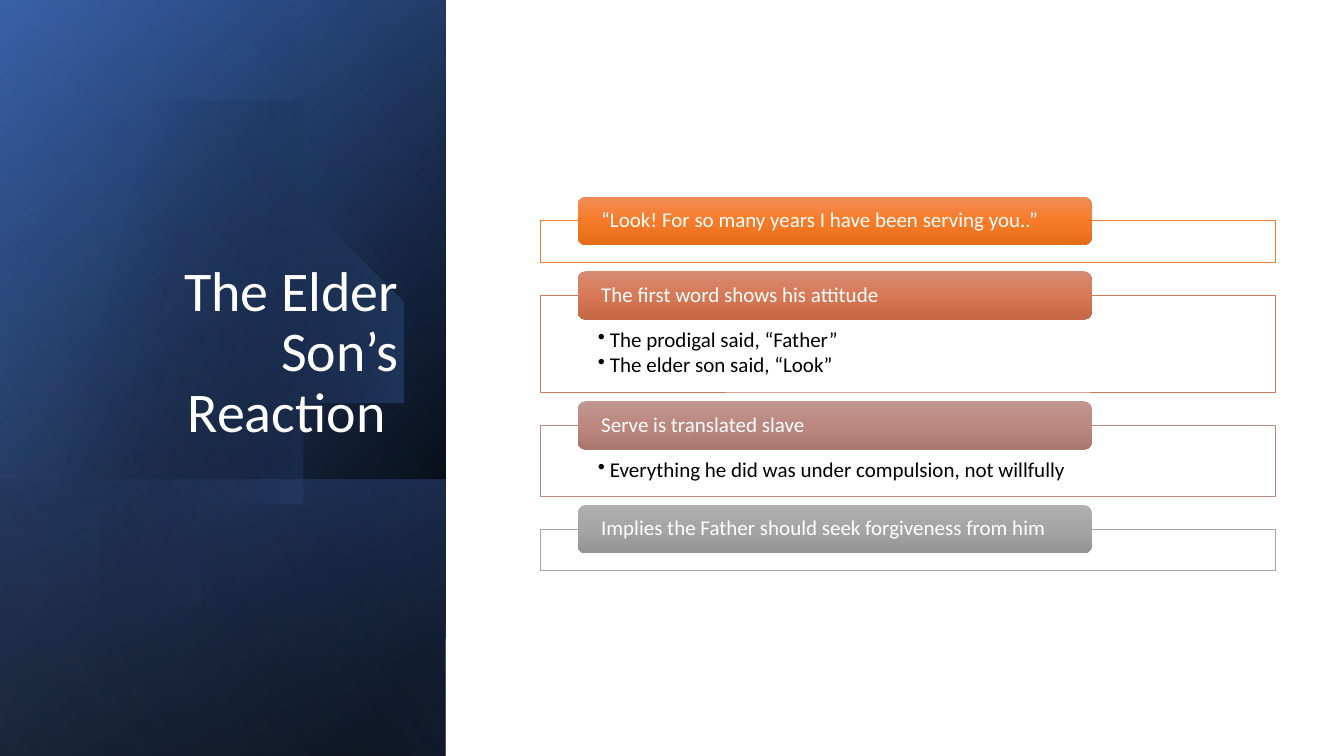
import pptx
import pptx.util
import pptx.dml.color
import pptx.enum.shapes
import pptx.enum.text
import pptx.oxml.ns
import lxml.etree
from dataclasses import dataclass

Inches, Pt = pptx.util.Inches, pptx.util.Pt
RGB = pptx.dml.color.RGBColor.from_string
SHAPE = pptx.enum.shapes.MSO_SHAPE
ANCHOR = pptx.enum.text.MSO_ANCHOR
ALIGN = pptx.enum.text.PP_ALIGN
qn = pptx.oxml.ns.qn

TITLE = "The Elder Son’s Reaction "
POINTS = [
    ("“Look! For so many years I have been serving you..”", [],
     "ED7D31", ("F18C57", "F67B28", "E56C19")),
    ("The first word shows his attitude",
     ["The prodigal said, “Father”", "The elder son said, “Look”"],
     "D17B5C", ("D78B72", "D77956", "C66846")),
    ("Serve is translated slave",
     ["Everything he did was under compulsion, not willfully"],
     "B98A82", ("C19791", "BC8880", "AA766E")),
    ("Implies the Father should seek forgiveness from him", [],
     "A5A5A5", ("AFAFAF", "A5A5A5", "939393")),
]


@dataclass(frozen=True)
class Theme:
    font: str = "Calibri"
    title_size: int = 40
    text_size: int = 15
    white: str = "FFFFFF"
    black: str = "000000"
    blue: str = "4472C4"
    deep_blue: str = "2F5597"
    pale_blue: str = "8FAADC"


THEME = Theme()
PANEL_WIDTH, SLIDE_HEIGHT = 4.42, 7.5
LOWER_HEIGHT = 2.74

BACKDROP = [(8, THEME.black, 100), (100, THEME.deep_blue, 100)], 50
GLOW = [(0, THEME.black, 0), (99, THEME.blue, 46)], 30
LOWER_SHADE = [(2, THEME.blue, 29), (100, THEME.black, 30)], 130
DISC_SHADE = [(29, THEME.black, 0), (100, THEME.blue, 43)], 14
SHEEN = [(0, THEME.black, 0), (99, THEME.pale_blue, 11)], 120

DISC_START = (1.49, 1.1)
DISC_CURVES = [
    ((2.46, 1.12), (3.35, 1.77), (3.63, 2.75)),
    ((3.98, 3.97), (3.28, 5.23), (2.07, 5.58)),
    ((1.31, 5.8), (0.53, 5.61), (-0.03, 5.14)),
    ((-0.15, 5.03), (-0.15, 5.03), (-0.15, 5.03)),
    ((-0.15, 1.75), (-0.15, 1.75), (-0.15, 1.75)),
    ((0, 1.61), (0, 1.61), (0, 1.61)),
    ((0.23, 1.42), (0.5, 1.28), (0.8, 1.19)),
    ((1.03, 1.13), (1.26, 1.1), (1.49, 1.1)),
]
CURVE_STEPS = 16

FRAME_LEFT, FRAME_WIDTH, FRAME_GAP, FIRST_TOP = 5.36, 7.29, 0.33, 2.19
FRAME_HEIGHTS = {0: 0.41, 1: 0.7, 2: 0.96}
PILL_LEFT, PILL_WIDTH, PILL_HEIGHT = 5.73, 5.1, 0.48


def add_alpha(color, percent):
    if percent < 100:
        lxml.etree.SubElement(color, qn("a:alpha"), val=str(percent * 1000))


def fill_gradient(shape, stops, angle):
    shape.shadow.inherit = False
    shape.fill.background()
    gradient = lxml.etree.Element(qn("a:gradFill"), rotWithShape="1")
    stop_list = lxml.etree.SubElement(gradient, qn("a:gsLst"))
    for position, hex_color, alpha in stops:
        stop = lxml.etree.SubElement(stop_list, qn("a:gs"), pos=str(position * 1000))
        add_alpha(lxml.etree.SubElement(stop, qn("a:srgbClr"), val=hex_color), alpha)
    lxml.etree.SubElement(gradient, qn("a:lin"), ang=str(angle * 60000), scaled="0")
    properties = shape._element.spPr
    properties.replace(properties.find(qn("a:noFill")), gradient)
    shape.line.fill.background()


def add_box(slide, preset, left, top, width, height):
    return slide.shapes.add_shape(
        preset, Inches(left), Inches(top), Inches(width), Inches(height))


def add_panel(slide, top, height, shade):
    left = (PANEL_WIDTH - height) / 2
    panel = add_box(slide, SHAPE.RECTANGLE, left, top + (height - PANEL_WIDTH) / 2,
                    height, PANEL_WIDTH)
    panel.rotation = 90
    panel._element.spPr.find(qn("a:xfrm")).set("flipH", "1")
    fill_gradient(panel, *shade)


def add_disc(slide):
    outline, start = [], DISC_START
    for first, second, end in DISC_CURVES:
        for step in range(1, CURVE_STEPS + 1):
            t = step / CURVE_STEPS
            outline.append(tuple(
                (1 - t) ** 3 * a + 3 * (1 - t) ** 2 * t * b + 3 * (1 - t) * t ** 2 * c + t ** 3 * d
                for a, b, c, d in zip(start, first, second, end)))
        start = end
    builder = slide.shapes.build_freeform(*DISC_START, scale=Inches(1))
    builder.add_line_segments(outline, close=True)
    fill_gradient(builder.convert_to_shape(), *DISC_SHADE)


def set_text(shape, lines, size, color, align, anchor, insets, after=0, bullets=False):
    frame = shape.text_frame
    frame.word_wrap = True
    frame.auto_size = pptx.enum.text.MSO_AUTO_SIZE.NONE
    frame.vertical_anchor = anchor
    frame.margin_left, frame.margin_top, frame.margin_right, frame.margin_bottom = map(Inches, insets)
    frame.text = "\n".join(lines)
    for paragraph in frame.paragraphs:
        paragraph.alignment = align
        paragraph.line_spacing = 0.9
        paragraph.space_after = Pt(after)
        if bullets:
            properties = paragraph._p.get_or_add_pPr()
            properties.set("marL", str(Inches(0.12)))
            properties.set("indent", str(Inches(-0.12)))
            lxml.etree.SubElement(properties, qn("a:buChar"), char="•")
        paragraph.font.name = THEME.font
        paragraph.font.size = Pt(size)
        paragraph.font.color.rgb = RGB(color)


def add_title(slide):
    title = slide.shapes.title
    title.left, title.top, title.width, title.height = map(Inches, (0.64, 1.84, 3.41, 2.62))
    set_text(title, [TITLE], THEME.title_size, THEME.white, ALIGN.RIGHT,
             ANCHOR.BOTTOM, (0.1, 0.05, 0.1, 0.05))
    slide.shapes._spTree.append(title._element)


def add_points(slide):
    top = FIRST_TOP
    for heading, details, edge, shades in POINTS:
        height = FRAME_HEIGHTS[len(details)]
        frame = add_box(slide, SHAPE.RECTANGLE, FRAME_LEFT, top, FRAME_WIDTH, height)
        frame.shadow.inherit = False
        frame.fill.solid()
        frame.fill.fore_color.rgb = RGB(THEME.white)
        add_alpha(frame._element.spPr.find(qn("a:solidFill"))[0], 90)
        frame.line.color.rgb = RGB(edge)
        frame.line.width = Pt(0.5)
        if details:
            set_text(frame, details, THEME.text_size, THEME.black, ALIGN.LEFT,
                     ANCHOR.TOP, (0.57, 0.34, 0.57, 0.12), after=1.5, bullets=True)
        pill = add_box(slide, SHAPE.ROUNDED_RECTANGLE, PILL_LEFT, top - PILL_HEIGHT / 2,
                       PILL_WIDTH, PILL_HEIGHT)
        fill_gradient(pill, [(50 * i, shade, 100) for i, shade in enumerate(shades)], 90)
        set_text(pill, [heading], THEME.text_size, THEME.white, ALIGN.LEFT,
                 ANCHOR.MIDDLE, (0.21, 0, 0.21, 0))
        top += height + FRAME_GAP


def main():
    deck = pptx.Presentation()
    deck.slide_width, deck.slide_height = Inches(13.33), Inches(SLIDE_HEIGHT)
    slide = deck.slides.add_slide(deck.slide_layouts.get_by_name("Title Only"))
    add_panel(slide, 0, SLIDE_HEIGHT, BACKDROP)
    add_panel(slide, 0, SLIDE_HEIGHT, GLOW)
    add_panel(slide, SLIDE_HEIGHT - LOWER_HEIGHT, LOWER_HEIGHT, LOWER_SHADE)
    add_disc(slide)
    add_panel(slide, 0, SLIDE_HEIGHT, SHEEN)
    add_title(slide)
    add_points(slide)
    deck.save("out.pptx")


if __name__ == "__main__":
    main()
